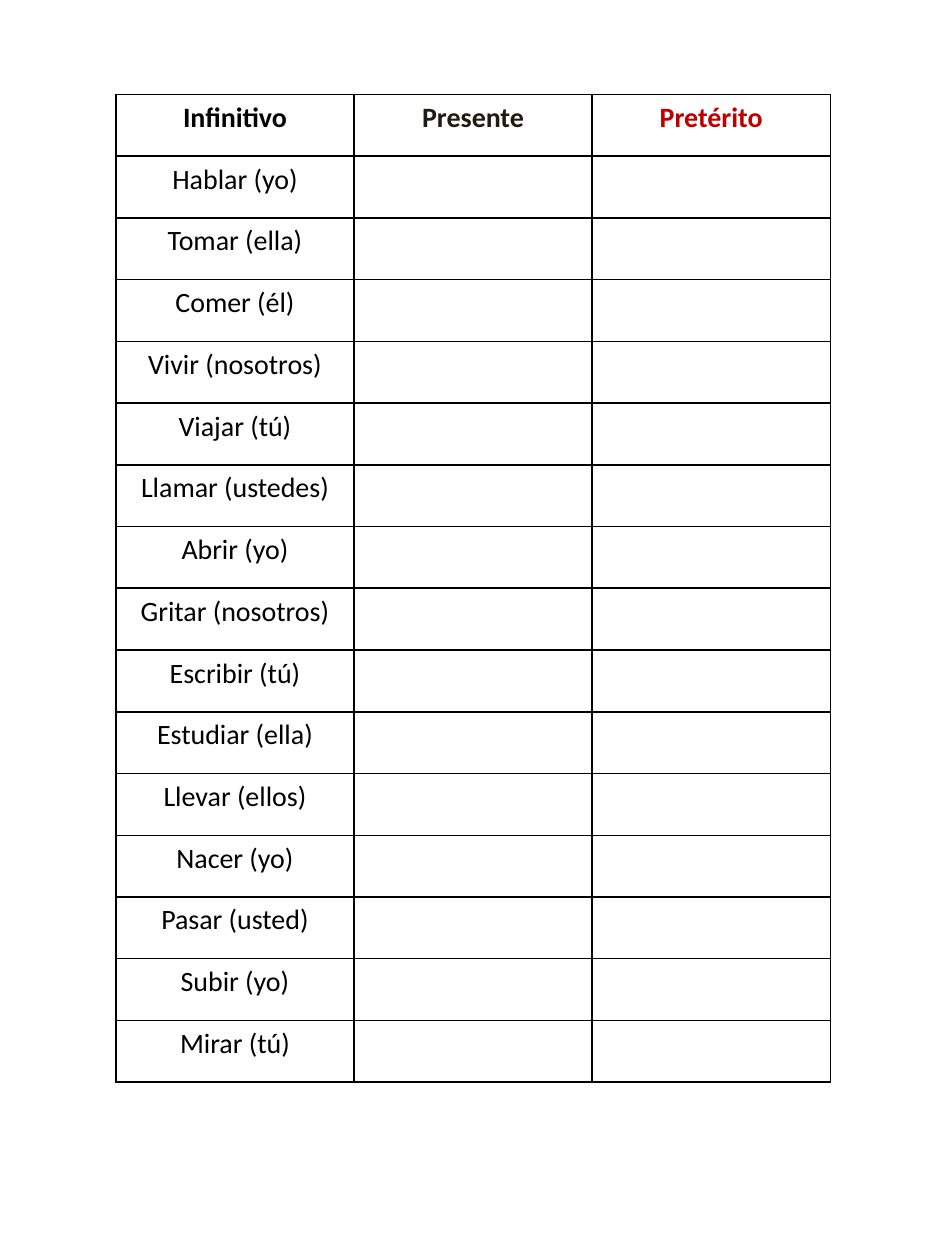
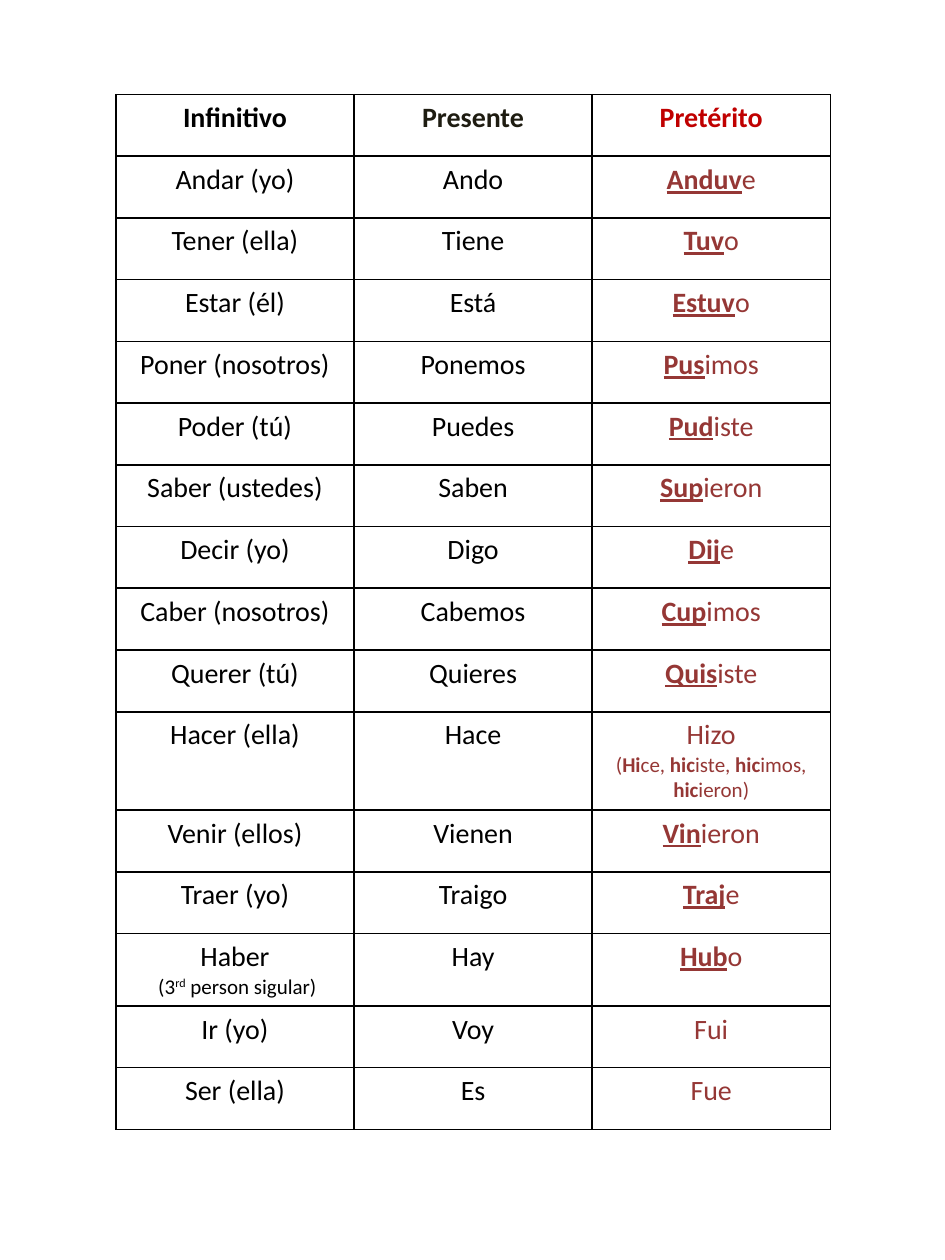
from dataclasses import dataclass

from lxml.etree import SubElement
from pptx import Presentation
from pptx.dml.color import RGBColor
from pptx.enum.text import PP_ALIGN
from pptx.oxml import parse_xml
from pptx.oxml.ns import nsdecls, qn
from pptx.slide import Slide
from pptx.table import _Cell
from pptx.util import Inches, Pt

COLORS = {"ink": "000000", "present": "1E1C11", "preterite": "C00000", "stem": "953735"}
FONT = "Calibri"
VERB_SIZE, NOTE_SIZE = 16, 12
PAGE_WIDTH, PAGE_HEIGHT = 7.5, 10
LEFT, TOP = 0.92, 0.75
COLUMN, ROW = 1.89, 0.49
ROWS_PER_TABLE = 8
BORDER_POINTS = 1


@dataclass(frozen=True)
class Run:
    text: str
    color: str = "ink"
    size: int = VERB_SIZE
    bold: bool = False
    underline: bool = False
    raised: bool = False


@dataclass(frozen=True)
class Row:
    """Each cell holds paragraphs, and each paragraph holds runs."""
    cells: list[list[list[Run]]]
    height: float = ROW


def one_line(text: str, **style) -> list[list[Run]]:
    return [[Run(text, **style)]]


def preterite(stem: str, ending: str) -> list[list[Run]]:
    return [[Run(stem, "stem", bold=True, underline=True), Run(ending, "stem")]]


def verb(infinitive: str, present: str, stem: str, ending: str) -> Row:
    return Row([one_line(infinitive), one_line(present), preterite(stem, ending)])


def regular(infinitive: str) -> Row:
    return Row([one_line(infinitive), [], []])


def whole_form(infinitive: str, present: str, past: str) -> Row:
    return Row([one_line(infinitive), one_line(present), one_line(past, color="stem")])


HEADER = Row([
    one_line("Infinitivo", bold=True),
    one_line("Presente", color="present", bold=True),
    one_line("Pretérito", color="preterite", bold=True),
])

HIZO_NOTE = [
    Run(text, "stem", NOTE_SIZE, bold=position % 2 == 1)
    for position, text in enumerate(
        ["(", "Hi", "ce, ", "hic", "iste, ", "hic", "imos, ", "hic", "ieron)"])
]
HABER_NOTE = [
    Run(" (3", size=NOTE_SIZE),
    Run("rd", size=NOTE_SIZE, raised=True),
    Run(" person sigular)", size=NOTE_SIZE),
]

REGULAR_VERBS = [HEADER] + [regular(infinitive) for infinitive in (
    "Hablar (yo)", "Tomar (ella)", "Comer (él)", "Vivir (nosotros)", "Viajar (tú)",
    "Llamar (ustedes)", "Abrir (yo)", "Gritar (nosotros)", "Escribir (tú)",
    "Estudiar (ella)", "Llevar (ellos)", "Nacer (yo)", "Pasar (usted)",
    "Subir (yo)", "Mirar (tú)",
)]

IRREGULAR_VERBS = [
    HEADER,
    verb("Andar (yo)", "Ando", "Anduv", "e"),
    verb("Tener (ella)", "Tiene", "Tuv", "o"),
    verb("Estar (él)", "Está", "Estuv", "o"),
    verb("Poner (nosotros)", "Ponemos", "Pus", "imos"),
    verb("Poder (tú)", "Puedes", "Pud", "iste"),
    verb("Saber (ustedes)", "Saben", "Sup", "ieron"),
    verb("Decir (yo)", "Digo", "Dij", "e"),
    verb("Caber (nosotros)", "Cabemos", "Cup", "imos"),
    verb("Querer (tú)", "Quieres", "Quis", "iste"),
    Row([one_line("Hacer (ella)"), one_line("Hace"),
         one_line("Hizo", color="stem") + [HIZO_NOTE]], height=0.78),
    verb("Venir (ellos)", "Vienen", "Vin", "ieron"),
    verb("Traer (yo)", "Traigo", "Traj", "e"),
    Row([one_line("Haber") + [HABER_NOTE], one_line("Hay"),
         preterite("Hub", "o")], height=0.57),
    whole_form("Ir (yo)", "Voy", "Fui"),
    whole_form("Ser (ella)", "Es", "Fue"),
]


def add_run(paragraph, text: str, *, color: str, size: int, bold: bool,
            underline: bool, raised: bool) -> None:
    run = paragraph.add_run()
    run.text = text
    font = run.font
    font.name, font.size = FONT, Pt(size)
    font.bold, font.underline = bold, underline
    font.color.rgb = RGBColor.from_string(COLORS[color])
    if raised:
        font._element.set("baseline", "30000")


def write_cell(cell: _Cell, paragraphs: list[list[Run]]) -> None:
    frame = cell.text_frame
    for position, runs in enumerate(paragraphs):
        paragraph = frame.add_paragraph() if position else frame.paragraphs[0]
        paragraph.alignment = PP_ALIGN.CENTER
        for run in runs:
            add_run(paragraph, run.text, color=run.color, size=run.size, bold=run.bold,
                    underline=run.underline, raised=run.raised)


def frame_cell(cell: _Cell) -> None:
    """Leave the cell unfilled and rule all four sides."""
    cell.fill.background()
    properties = cell._tc.get_or_add_tcPr()
    for position, side in enumerate(("lnL", "lnR", "lnT", "lnB")):
        line = parse_xml(f'<a:{side} {nsdecls("a")} w="{Pt(BORDER_POINTS)}"/>')
        fill = SubElement(line, qn("a:solidFill"))
        SubElement(fill, qn("a:srgbClr")).set("val", COLORS["ink"])
        properties.insert(position, line)


def add_verb_table(slide: Slide, rows: list[Row], top: float) -> None:
    columns = len(HEADER.cells)
    table = slide.shapes.add_table(
        len(rows), columns, Inches(LEFT), Inches(top),
        Inches(columns * COLUMN), Inches(sum(row.height for row in rows))).table
    table.first_row = table.horz_banding = False
    for column in table.columns:
        column.width = Inches(COLUMN)
    for row_number, row in enumerate(rows):
        table.rows[row_number].height = Inches(row.height)
        for column_number, paragraphs in enumerate(row.cells):
            cell = table.cell(row_number, column_number)
            frame_cell(cell)
            write_cell(cell, paragraphs)


def add_verb_slide(deck, rows: list[Row]) -> None:
    """Stack the rows in tables of eight, one directly under the other."""
    slide = deck.slides.add_slide(deck.slide_layouts[6])
    top = TOP
    for start in range(0, len(rows), ROWS_PER_TABLE):
        group = rows[start:start + ROWS_PER_TABLE]
        add_verb_table(slide, group, top)
        top += sum(row.height for row in group)


def main() -> None:
    deck = Presentation()
    deck.slide_width, deck.slide_height = Inches(PAGE_WIDTH), Inches(PAGE_HEIGHT)
    for rows in (REGULAR_VERBS, IRREGULAR_VERBS):
        add_verb_slide(deck, rows)
    deck.save("out.pptx")


if __name__ == "__main__":
    main()
